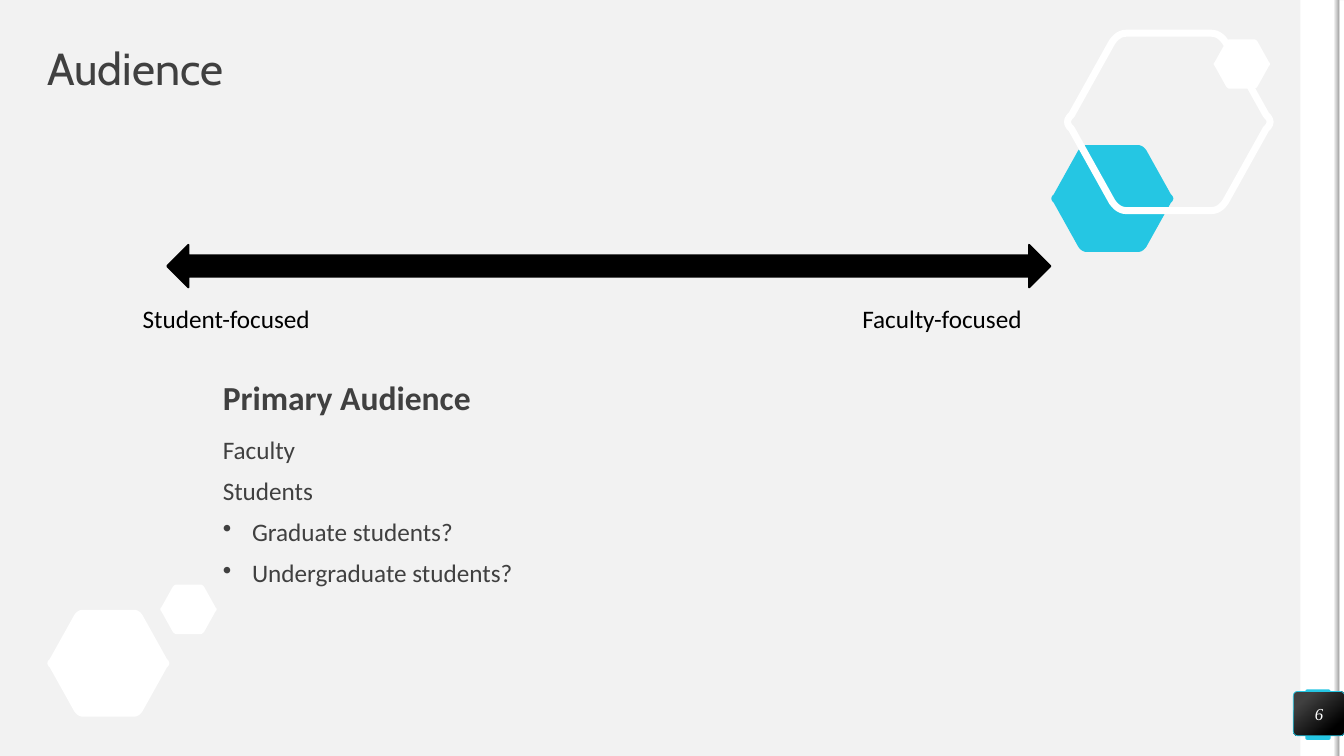
"""Build the Audience slide on a grid of 133.33 columns by 75 rows."""
from lxml.etree import SubElement
from pptx import Presentation
from pptx.dml.color import RGBColor
from pptx.enum.shapes import MSO_SHAPE
from pptx.enum.text import MSO_ANCHOR, MSO_AUTO_SIZE, PP_ALIGN
from pptx.oxml.ns import qn
from pptx.util import Inches, Pt

WHITE = RGBColor(0xFF, 0xFF, 0xFF)
BLACK = RGBColor(0, 0, 0)
PALE = RGBColor(0xF2, 0xF2, 0xF2)
GRAY = RGBColor(0xA6, 0xA6, 0xA6)
DARK = RGBColor(0x40, 0x40, 0x40)
CYAN = RGBColor(0x25, 0xC6, 0xE3)
STEPS = 6
CORNERS = [
    ((0.71, 0), (0.75, 0), (0.78, 0.05)),
    ((0.98, 0.46), (1.02, 0.5), (0.98, 0.54)),
    ((0.78, 0.95), (0.75, 1), (0.71, 1)),
    ((0.29, 1), (0.25, 1), (0.22, 0.95)),
    ((0.02, 0.54), (-0.02, 0.5), (0.02, 0.46)),
    ((0.22, 0.05), (0.25, 0), (0.29, 0)),
]


def grid(*cells):
    return [Inches(cell / 10) for cell in cells]


def paint(shape, fill=None, line=None, width=1):
    shape.shadow.inherit = False
    if fill is None:
        shape.fill.background()
    else:
        shape.fill.solid()
        shape.fill.fore_color.rgb = fill
    if line is None:
        shape.line.fill.background()
    else:
        shape.line.color.rgb = line
        shape.line.width = Pt(width)


def blend(shape, angle, *stops):
    shape.fill.gradient()
    shape.fill.gradient_angle = angle
    for stop, (place, color) in zip(shape.fill.gradient_stops, stops):
        stop.position = place
        stop.color.rgb = color


def block(slide, kind, area, fill, line=None, width=1, round_by=None):
    shape = slide.shapes.add_shape(kind, *grid(*area))
    paint(shape, fill, line, width)
    if round_by is not None:
        shape.adjustments[0] = round_by
    return shape


def bend(start, mid, end):
    for step in range(STEPS + 1):
        t = step / STEPS
        yield [(1 - t) ** 2 * a + 2 * t * (1 - t) * b + t * t * c
               for a, b, c in zip(start, mid, end)]


def hexagon(slide, area, fill=None, line=None, width=1):
    left, top, wide, high = grid(*area)
    points = [(round(left + x * wide), round(top + y * high))
              for corner in CORNERS for x, y in bend(*corner)]
    pen = slide.shapes.build_freeform(*points[0], scale=1.0)
    pen.add_line_segments(points[1:], close=True)
    paint(pen.convert_to_shape(), fill, line, width)


def bullet(para):
    props = para._p.get_or_add_pPr()
    props.set("marL", str(Inches(0.29)))
    props.set("indent", str(-Inches(0.29)))
    SubElement(props, qn("a:buChar")).set("char", "•")


def write(para, words, size, face, color, bold=False, slant=False):
    run = para.add_run()
    run.text = words
    font = run.font
    font.size, font.name, font.color.rgb = Pt(size), face, color
    font.bold, font.italic = bold, slant


def strip(frame):
    frame.margin_left = frame.margin_right = 0
    frame.margin_top = frame.margin_bottom = 0


def text(slide, area, lines, size, face="Calibri", bold=False,
         anchor=MSO_ANCHOR.TOP):
    frame = slide.shapes.add_textbox(*grid(*area)).text_frame
    frame.word_wrap = True
    frame.vertical_anchor = anchor
    strip(frame)
    for index, (words, dotted) in enumerate(lines):
        para = frame.add_paragraph() if index else frame.paragraphs[0]
        if dotted:
            bullet(para)
        para.line_spacing = 0.9
        if index:
            para.space_before = Pt(10)
        write(para, words, size, face, DARK, bold)


def label(slide, left, words):
    frame = slide.shapes.add_textbox(*grid(left, 29.6, 32.3, 4)).text_frame
    frame.word_wrap = True
    frame.auto_size = MSO_AUTO_SIZE.SHAPE_TO_FIT_TEXT
    para = frame.paragraphs[0]
    para.alignment = PP_ALIGN.CENTER
    write(para, words, 18, "Calibri", BLACK)


def border(slide):
    block(slide, MSO_SHAPE.RECTANGLE, (129, 0, 3.9, 75), WHITE)
    block(slide, MSO_SHAPE.ROUNDED_RECTANGLE, (129.5, 68.4, 2.5, 5), CYAN,
          round_by=0.07)
    for left in (95.6, 95.1):
        edge = block(slide, MSO_SHAPE.RECTANGLE, (left, 37.3, 75, 0.5), WHITE)
        edge.rotation = 90
    blend(edge, 90, (0, PALE), (1, GRAY))


def badge(slide, number):
    shape = block(slide, MSO_SHAPE.ROUNDED_RECTANGLE, (128.3, 68.6, 5.1, 4.4),
                  BLACK, CYAN, 0.5, 0.1)
    blend(shape, 310, (0.2, DARK), (0.82, BLACK))
    frame = shape.text_frame
    strip(frame)
    frame.vertical_anchor = MSO_ANCHOR.MIDDLE
    para = frame.paragraphs[0]
    para.alignment = PP_ALIGN.CENTER
    write(para, number, 12, "Times New Roman", WHITE, slant=True)


def main():
    deck = Presentation()
    deck.slide_width, deck.slide_height = grid(133.33, 75)
    slide = deck.slides.add_slide(deck.slide_layouts[6])
    slide.background.fill.solid()
    slide.background.fill.fore_color.rgb = PALE
    border(slide)
    hexagon(slide, (4.7, 60.5, 12.1, 10.6), WHITE)
    hexagon(slide, (104.3, 14.4, 12.1, 10.6), CYAN)
    hexagon(slide, (105.9, 3.3, 20.1, 17.6), line=WHITE, width=5)
    for left, top in ((15.9, 58), (120.4, 3.9)):
        hexagon(slide, (left, top, 5.6, 4.9), WHITE)
    text(slide, (4.7, 4.7, 124, 4.7), [("Audience", False)], 32, "Cabin",
         anchor=MSO_ANCHOR.MIDDLE)
    text(slide, (22.1, 37.8, 59.8, 3.9), [("Primary Audience", False)], 24,
         bold=True)
    text(slide, (22.1, 43.4, 59.8, 20.6),
         [("Faculty", False), ("Students", False),
          ("Graduate students?", True), ("Undergraduate students?", True)], 18)
    badge(slide, "6")
    block(slide, MSO_SHAPE.LEFT_RIGHT_ARROW, (16.6, 24.3, 87.6, 4.2), BLACK,
          BLACK, 1.5)
    label(slide, 6.3, "Student-focused")
    label(slide, 77.3, "Faculty-focused")
    deck.save("out.pptx")


if __name__ == "__main__":
    main()
